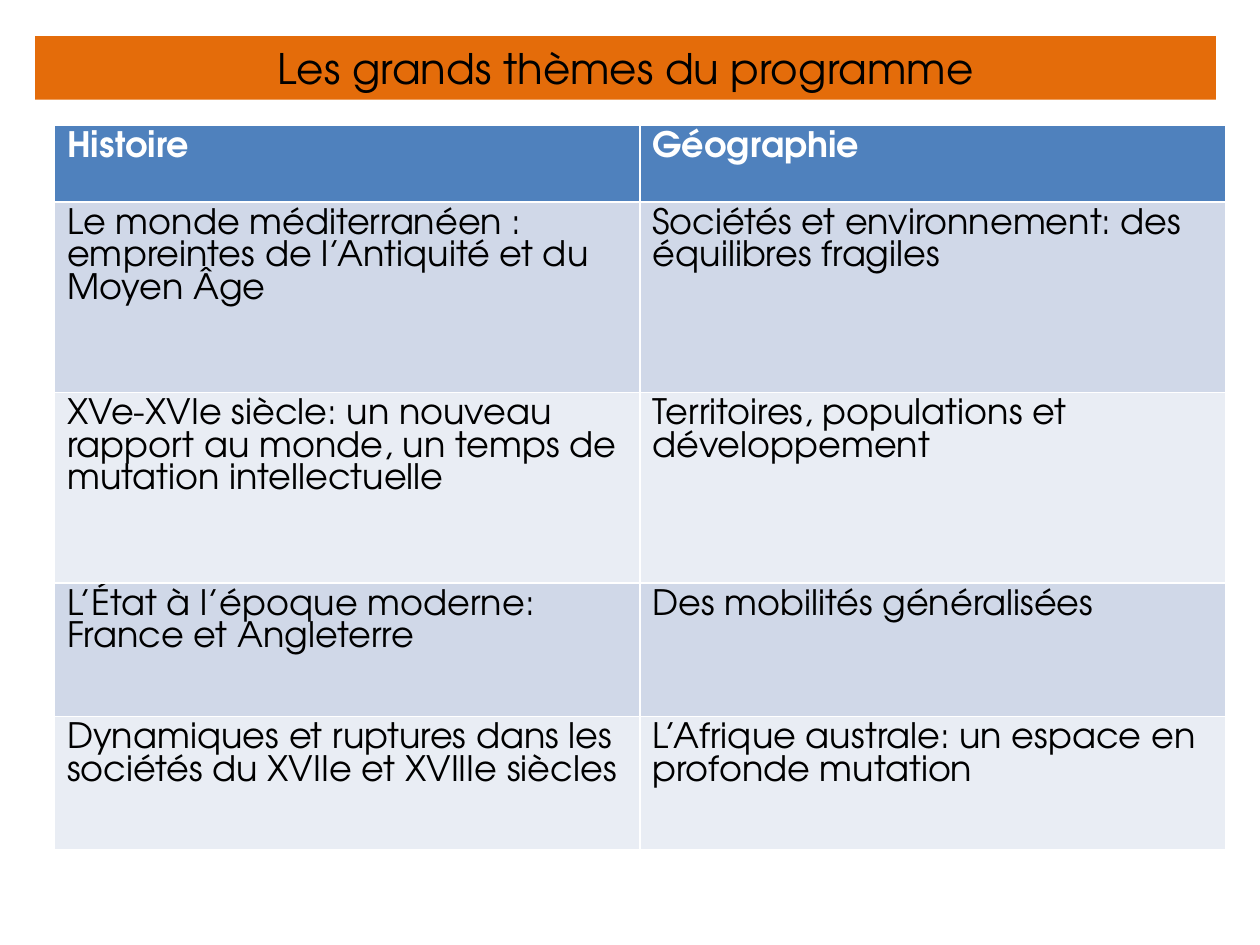
from pptx import Presentation
from pptx.dml.color import RGBColor
from pptx.enum.text import MSO_ANCHOR, PP_ALIGN
from pptx.util import Cm, Pt

FONT = "TeX Gyre Adventor"


def color(hex_string):
    return RGBColor.from_string(hex_string)


def add_text(paragraph, text, size, hex_string, bold=False):
    run = paragraph.add_run()
    run.text = text
    run.font.name = FONT
    run.font.size = Pt(size)
    run.font.bold = bold
    run.font.color.rgb = color(hex_string)


presentation = Presentation()
presentation.slide_width = Cm(25.4)
presentation.slide_height = Cm(19.05)
slide = presentation.slides.add_slide(presentation.slide_layouts[5])

# Title band
title = slide.shapes.title
title.left, title.top, title.width, title.height = Cm(0.71), Cm(0.73), Cm(23.8), Cm(1.28)
title.fill.solid()
title.fill.fore_color.rgb = color("E46C0A")
title.text_frame.vertical_anchor = MSO_ANCHOR.MIDDLE
paragraph = title.text_frame.paragraphs[0]
paragraph.alignment = PP_ALIGN.CENTER
add_text(paragraph, "Les grands thèmes du programme", 24, "000000")

# Themes by subject; the default table style draws the white borders
themes = [
    ("Histoire", "Géographie"),
    ("Le monde méditerranéen : empreintes de l’Antiquité et du Moyen Âge",
     "Sociétés et environnement: des équilibres fragiles"),
    ("XVe-XVIe siècle: un nouveau rapport au monde, un temps de mutation intellectuelle",
     "Territoires, populations et développement"),
    ("L’État à l’époque moderne: France et Angleterre",
     "Des mobilités généralisées"),
    ("Dynamiques et ruptures dans les sociétés du XVIIe et XVIIIe siècles",
     "L’Afrique australe: un espace en profonde mutation"),
]
row_heights = [1.54, 3.84, 3.84, 2.69, 2.69]
table = slide.shapes.add_table(
    len(themes), 2, Cm(1.1), Cm(2.53), Cm(23.6), Cm(sum(row_heights))
).table

for row_index, (texts, height) in enumerate(zip(themes, row_heights)):
    table.rows[row_index].height = Cm(height)
    is_header = row_index == 0
    band = "D0D8E8" if row_index % 2 else "E9EDF4"
    for column_index, text in enumerate(texts):
        cell = table.cell(row_index, column_index)
        cell.fill.solid()
        cell.fill.fore_color.rgb = color("4F81BD" if is_header else band)
        add_text(cell.text_frame.paragraphs[0], text, 20,
                 "FFFFFF" if is_header else "000000", is_header)

presentation.save("out.pptx")
